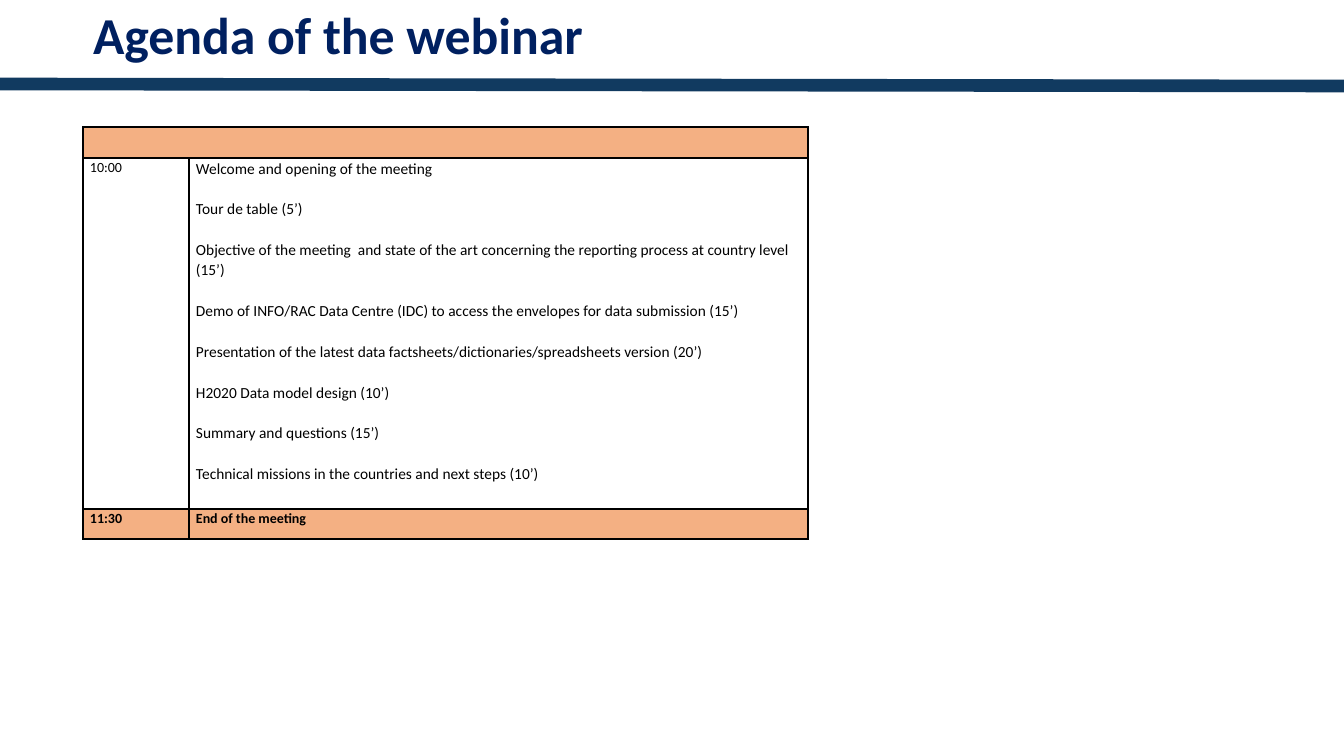
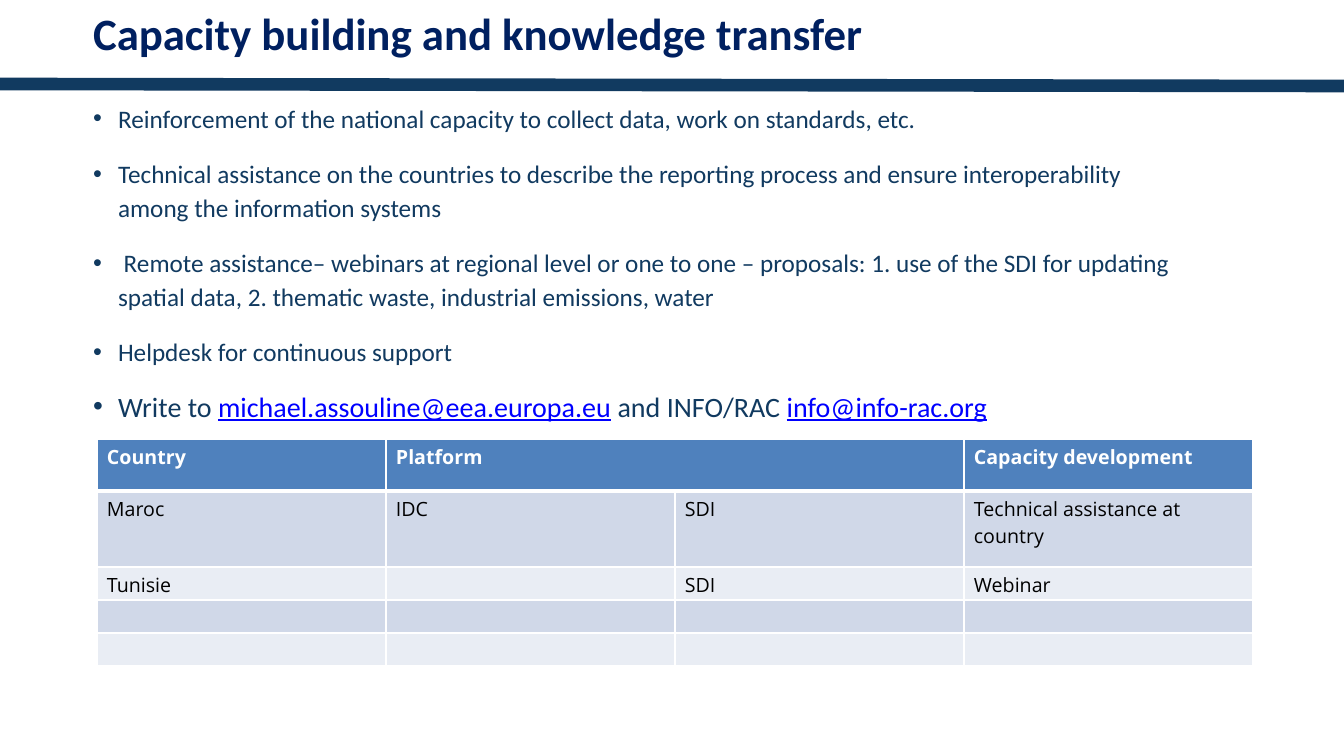
"""Build a webinar agenda slide and a capacity building slide."""
from lxml import etree
from pptx import Presentation
from pptx.dml.color import RGBColor
from pptx.enum import shapes, text
from pptx.oxml import ns
from pptx.util import Pt

PX = 914400 / 100.8
NAVY = RGBColor(0x00, 0x20, 0x60)
PETROL = RGBColor(0x11, 0x3A, 0x60)
LINK = RGBColor(0x00, 0x00, 0xFF)
BLACK = RGBColor(0x00, 0x00, 0x00)
WHITE = RGBColor(0xFF, 0xFF, 0xFF)
PEACH = RGBColor(0xF4, 0xB0, 0x83)
BLUE = RGBColor(0x4F, 0x81, 0xBD)
PALE = RGBColor(0xD0, 0xD8, 0xE8)
PALER = RGBColor(0xE9, 0xED, 0xF4)


def write(para, words, size, color, bold=False, font="Calibri"):
    span = para.add_run()
    span.text = words
    span.font.name = font
    span.font.size = Pt(size)
    span.font.bold = bold
    span.font.color.rgb = color
    return span


def dress(cell, fill, border, margins, top=1, bottom=1):
    cell.fill.solid()
    cell.fill.fore_color.rgb = fill
    side, above, below = (round(margin * PX) for margin in margins)
    cell.margin_left = cell.margin_right = side
    cell.margin_top, cell.margin_bottom = above, below
    properties = cell._tc.get_or_add_tcPr()
    edges = (("a:lnL", 1), ("a:lnR", 1), ("a:lnT", top), ("a:lnB", bottom))
    for index, (tag, width) in enumerate(edges):
        edge = etree.Element(ns.qn(tag), w=str(Pt(width)))
        paint = etree.SubElement(edge, ns.qn("a:solidFill"))
        etree.SubElement(paint, ns.qn("a:srgbClr"), val=str(border))
        properties.insert(index, edge)


deck = Presentation()
deck.slide_width, deck.slide_height = round(1344 * PX), round(756 * PX)

pages = []
for layout, words, size, height in (
    (5, "Agenda of the webinar", 37, 56),
    (1, "Capacity building and knowledge transfer", 32, 50),
):
    page = deck.slides.add_slide(deck.slide_layouts[layout])
    title = page.shapes.title
    title.left, title.top, title.width, title.height = (
        round(length * PX) for length in (83, 15, 1227, height))
    frame = title.text_frame
    frame.word_wrap = True
    frame.auto_size = text.MSO_AUTO_SIZE.NONE
    frame.vertical_anchor = text.MSO_ANCHOR.TOP
    para = frame.paragraphs[0]
    para.alignment = text.PP_ALIGN.LEFT
    para.line_spacing = 0.7
    para.space_before = Pt(0)
    write(para, words, size, NAVY, bold=True)
    pages.append(page)
agenda_page, capacity_page = pages

band = agenda_page.shapes.add_connector(
    shapes.MSO_CONNECTOR.STRAIGHT, 0, round(84 * PX), round(1344 * PX), round(86 * PX))
band.line.color.rgb = PETROL
band.line.width = Pt(9)
etree.SubElement(band.element.spPr, ns.qn("a:effectLst"))
band.element.nvCxnSpPr.cNvPr.set("id", "20")
deck.slide_master.shapes.element.append(band.element)

agenda_items = (
    "Welcome and opening of the meeting",
    "Tour de table (5’)",
    "Objective of the meeting  and state of the art concerning the reporting process at country level (15’)",
    "Demo of INFO/RAC Data Centre (IDC) to access the envelopes for data submission (15’)",
    "Presentation of the latest data factsheets/dictionaries/spreadsheets version (20’)",
    "H2020 Data model design (10’)",
    "Summary and questions (15’)",
    "Technical missions in the countries and next steps (10’)",
)
agenda = agenda_page.shapes.add_table(
    3, 2, *(round(length * PX) for length in (83, 127, 725, 412))).table
agenda.first_row = agenda.horz_banding = False
for column, width in zip(agenda.columns, (106, 619)):
    column.width = round(width * PX)
for row, height, fill in zip(agenda.rows, (31, 351, 30), (PEACH, WHITE, PEACH)):
    row.height = round(height * PX)
    for cell in row.cells:
        dress(cell, fill, BLACK, (7, 0, 0))
agenda.cell(0, 0).merge(agenda.cell(0, 1))
for row, column, words, bold in (
    (1, 0, "10:00", False), (2, 0, "11:30", True), (2, 1, "End of the meeting", True),
):
    para = agenda.cell(row, column).text_frame.paragraphs[0]
    para.line_spacing = 1.1
    para.space_after = Pt(6)
    write(para, words, 10, BLACK, bold)
frame = agenda.cell(1, 1).text_frame
for index, words in enumerate(agenda_items):
    para = frame.add_paragraph() if index else frame.paragraphs[0]
    para.line_spacing = 1.07
    para.space_after = Pt(14.6)
    write(para, words, 11, BLACK)

bullets = (
    (18, 1.1, ("Reinforcement of the national capacity to collect data, work on standards, etc.",)),
    (18, 1.1, ("Technical assistance on the countries to describe the reporting process and "
               "ensure interoperability among the information systems",)),
    (18, 1.1, (" Remote assistance– webinars at regional level or one to one – proposals: 1. use of "
               "the SDI for updating spatial data, 2. thematic waste, industrial emissions, water",)),
    (18, 1.1, ("Helpdesk for continuous support",)),
    (20, 1.0, ("Write to ", "michael.assouline@eea.europa.eu", " and INFO/RAC ", "info@info-rac.org")),
)
body = capacity_page.placeholders[1]
body.left, body.top, body.width, body.height = (
    round(length * PX) for length in (83, 95, 1122, 340))
frame = body.text_frame
frame.word_wrap = True
frame.auto_size = text.MSO_AUTO_SIZE.NONE
frame.vertical_anchor = text.MSO_ANCHOR.TOP
for index, (size, spacing, pieces) in enumerate(bullets):
    para = frame.add_paragraph() if index else frame.paragraphs[0]
    properties = para._p.get_or_add_pPr()
    properties.set("marL", str(round(25 * PX)))
    properties.set("indent", str(round(-25 * PX)))
    etree.SubElement(properties, ns.qn("a:buFont"), typeface="Arial")
    etree.SubElement(properties, ns.qn("a:buChar"), char="•")
    para.line_spacing = spacing
    para.space_before = Pt(10 if index else 0)
    para.space_after = Pt(6)
    for words in pieces:
        address = "@" in words
        span = write(para, words, size, LINK if address else PETROL)
        span.font.underline = address

support_rows = (
    (52, BLUE, ("Country", "Platform", "", "Capacity development")),
    (76, PALE, ("Maroc", "IDC", "SDI", "Technical assistance at country")),
    (33, PALER, ("Tunisie", "", "SDI", "Webinar")),
    (33, PALE, ("",) * 4),
    (33, PALER, ("",) * 4),
)
support = capacity_page.shapes.add_table(
    5, 4, *(round(length * PX) for length in (97, 439, 1156, 227))).table
support.first_row = support.horz_banding = False
for column in support.columns:
    column.width = round(289 * PX)
for index, (height, fill, labels) in enumerate(support_rows):
    header = index == 0
    support.rows[index].height = round(height * PX)
    for cell, words in zip(support.rows[index].cells, labels):
        dress(cell, fill, WHITE, (10, 5 if words else 0, 0),
              top=3 if index == 1 else 1, bottom=3 if header else 1)
        if words:
            write(cell.text_frame.paragraphs[0], words, 14,
                  WHITE if header else BLACK, header, "Open Sans")
support.cell(0, 1).merge(support.cell(0, 2))

deck.save("out.pptx")
